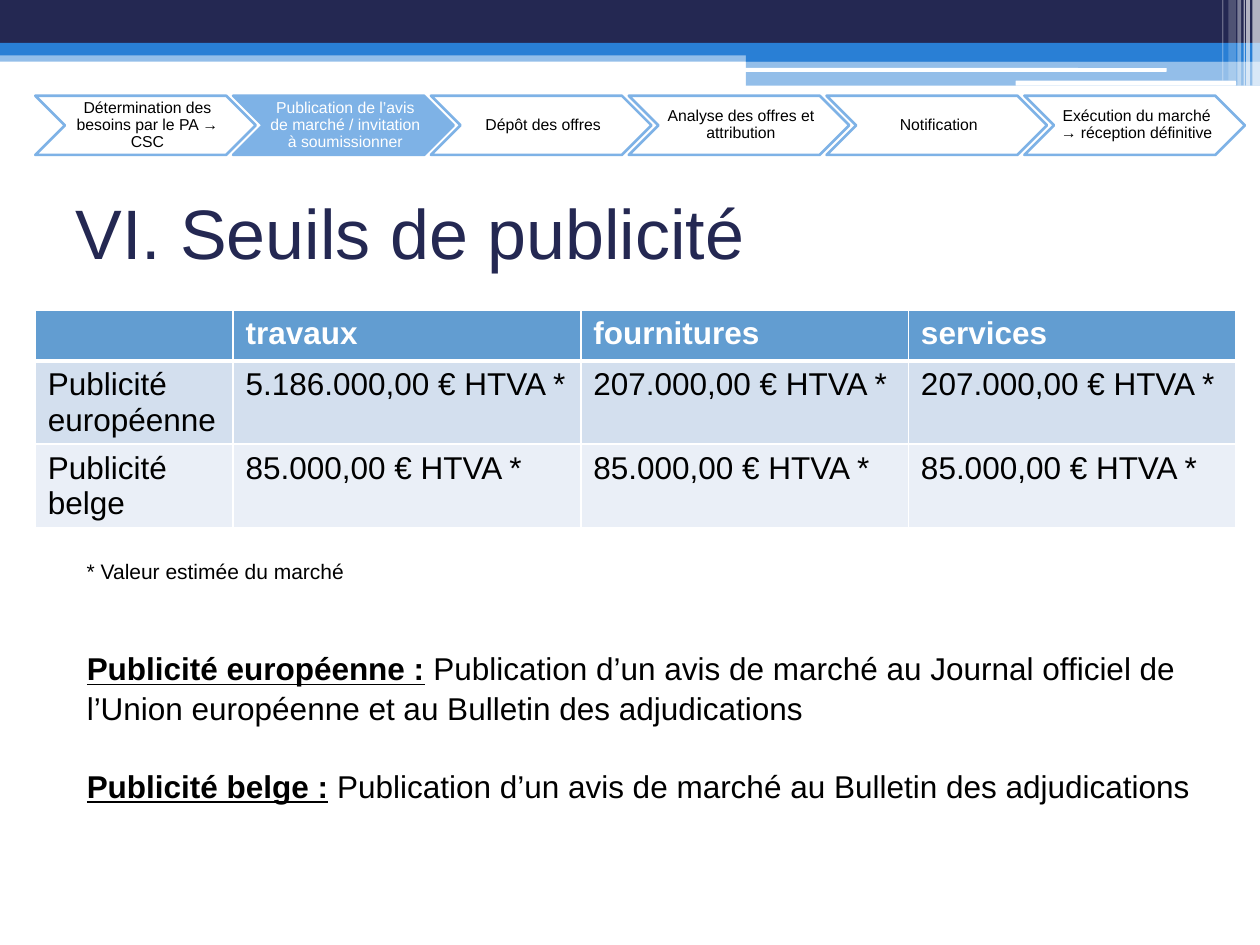
from dataclasses import dataclass
from lxml.etree import SubElement
from pptx import Presentation
from pptx.dml.color import RGBColor
from pptx.enum.shapes import MSO_SHAPE
from pptx.enum.text import MSO_ANCHOR, PP_ALIGN
from pptx.oxml import parse_xml
from pptx.oxml.ns import nsdecls, qn
from pptx.util import Inches, Pt


@dataclass(frozen=True)
class Theme:
    font: str = "Arial"
    navy: str = "242852"
    blue: str = "297FD5"
    sky: str = "7EB2E6"
    white: str = "FFFFFF"
    black: str = "000000"
    header: str = "629DD1"
    bands: tuple = ("D3DFEE", "EAEFF7")
    title_size: int = 40
    body_size: int = 18
    note_size: int = 12
    step_size: int = 9


THEME = Theme()
WIDTH, HEIGHT = 10, 7.5

STEPS = [
    "Détermination des besoins par le PA → CSC",
    "Publication de l’avis de marché / invitation à soumissionner",
    "Dépôt des offres",
    "Analyse des offres et attribution",
    "Notification",
    "Exécution du marché → réception définitive",
]
ACTIVE_STEP = 1
TITLE = "VI. Seuils de publicité"
THRESHOLDS = [
    ["", "travaux", "fournitures", "services"],
    ["Publicité européenne", "5.186.000,00 € HTVA *", "207.000,00 € HTVA *", "207.000,00 € HTVA *"],
    ["Publicité belge"] + ["85.000,00 € HTVA *"] * 3,
]
COLUMN_WIDTHS = [1.57, 2.76, 2.6, 2.6]
ROW_HEIGHTS = [0.38, 0.66, 0.66]
NOTE = "* Valeur estimée du marché"
DEFINITIONS = [
    ("Publicité européenne :",
     "Publication d’un avis de marché au Journal officiel de l’Union européenne et au Bulletin des adjudications"),
    ("Publicité belge :", "Publication d’un avis de marché au Bulletin des adjudications"),
]

BANNER_EDGE = 0.68
BANNER_SPLIT = 5.92
BANDS = [
    (0, 0.4, WIDTH, 0.09, THEME.blue, 50),
    (0, 0, WIDTH, 0.34, THEME.navy, 100),
    (0, 0.34, WIDTH, 0.1, THEME.blue, 100),
    (BANNER_SPLIT, 0.39, WIDTH - BANNER_SPLIT, 0.1, THEME.blue, 100),
    (BANNER_SPLIT, 0.48, WIDTH - BANNER_SPLIT, 0.2, THEME.blue, 50),
]
RULES = [(5.91, 0.54, 3.35, 0.03), (8.06, 0.64, 1.75, 0.04)]
STRIPES = [
    (9.94, 0.06, BANNER_EDGE, 65),
    (9.89, 0.03, BANNER_EDGE, 65),
    (9.87, 0.01, BANNER_EDGE, 60),
    (9.82, 0.03, BANNER_EDGE, 40),
    (9.75, 0.06, 0.64, 20),
    (9.7, 0.01, 0.64, 30),
]


def place(left, top, width, height):
    return [Inches(value) for value in (left, top, width, height)]


def write(para, text, size=THEME.body_size, color=THEME.black, bold=False, underline=False):
    span = para.add_run()
    span.text = text
    span.font.name = THEME.font
    span.font.size = Pt(size)
    span.font.bold = bold
    span.font.underline = underline
    span.font.color.rgb = RGBColor.from_string(color)


def add_block(page, kind, area, fill=None, opacity=100, line=None):
    block = page.shapes.add_shape(kind, *place(*area))
    block.shadow.inherit = False
    if fill:
        block.fill.solid()
        block.fill.fore_color.rgb = RGBColor.from_string(fill)
    else:
        block.fill.background()
    if opacity < 100:
        color = block.fill._xPr.find(".//" + qn("a:srgbClr"))
        SubElement(color, qn("a:alpha"), val=str(opacity * 1000))
    if line:
        block.line.color.rgb = RGBColor.from_string(line)
        block.line.width = Pt(1.5)
    else:
        block.line.fill.background()
    return block


def add_box(page, area):
    frame = page.shapes.add_textbox(*place(*area)).text_frame
    frame.word_wrap = True
    return frame


def add_banner(page):
    for *area, color, opacity in BANDS:
        add_block(page, MSO_SHAPE.RECTANGLE, area, color, opacity)
    for area in RULES:
        add_block(page, MSO_SHAPE.ROUNDED_RECTANGLE, area, THEME.white)
    for left, width, height, opacity in STRIPES:
        add_block(page, MSO_SHAPE.RECTANGLE, (left, 0, width, height), THEME.white, opacity)


def add_steps(page, left=0.28, top=0.76, pitch=1.57, width=1.75, height=0.47):
    for index, text in enumerate(STEPS):
        active = index == ACTIVE_STEP
        area = (left + index * pitch, top, width, height)
        step = add_block(page, MSO_SHAPE.CHEVRON, area, THEME.sky if active else None, line=THEME.sky)
        frame = step.text_frame
        frame.word_wrap = True
        frame.vertical_anchor = MSO_ANCHOR.MIDDLE
        frame.margin_left = Inches(0.04)
        frame.margin_top = frame.margin_right = frame.margin_bottom = Inches(0.01)
        para = frame.paragraphs[0]
        para.alignment = PP_ALIGN.CENTER
        para.line_spacing = 0.9
        write(para, text, size=THEME.step_size, color=THEME.white if active else THEME.black)


def set_borders(cell, bottom):
    properties = cell._tc.get_or_add_tcPr()
    for position, (side, points) in enumerate((("L", 1), ("R", 1), ("T", 1), ("B", bottom))):
        properties.insert(position, parse_xml(
            f'<a:ln{side} {nsdecls("a")} w="{Pt(points)}"><a:solidFill>'
            f'<a:srgbClr val="{THEME.white}"/></a:solidFill></a:ln{side}>'))


def add_thresholds(page):
    area = place(0.28, 2.46, sum(COLUMN_WIDTHS), sum(ROW_HEIGHTS))
    table = page.shapes.add_table(len(ROW_HEIGHTS), len(COLUMN_WIDTHS), *area).table
    for column, width in zip(table.columns, COLUMN_WIDTHS):
        column.width = Inches(width)
    fills = (THEME.header, *THEME.bands)
    for index, (row, height, texts, fill) in enumerate(zip(table.rows, ROW_HEIGHTS, THRESHOLDS, fills)):
        row.height = Inches(height)
        heading = index == 0
        for cell, text in zip(row.cells, texts):
            cell.fill.solid()
            cell.fill.fore_color.rgb = RGBColor.from_string(fill)
            set_borders(cell, bottom=3 if heading else 1)
            if text:
                write(cell.text_frame.paragraphs[0], text, bold=heading,
                      color=THEME.white if heading else THEME.black)


def add_title(page):
    title = page.shapes.title
    title.left, title.top, title.width, title.height = place(0.5, 1.25, 0.9 * WIDTH, 1.17)
    title.text_frame.vertical_anchor = MSO_ANCHOR.MIDDLE
    para = title.text_frame.paragraphs[0]
    para.alignment = PP_ALIGN.LEFT
    write(para, TITLE, size=THEME.title_size, color=THEME.navy)


def add_definitions(page):
    frame = add_box(page, (0.59, 5.09, 8.98, 1.92))
    for index, (term, meaning) in enumerate(DEFINITIONS):
        para = frame.add_paragraph() if index else frame.paragraphs[0]
        para.line_spacing = 1.05
        para.space_before = Pt(22 if index else 0)
        write(para, term, bold=True, underline=True)
        write(para, " ", bold=True)
        write(para, meaning)


def main():
    deck = Presentation()
    deck.slide_width, deck.slide_height = Inches(WIDTH), Inches(HEIGHT)
    page = deck.slides.add_slide(deck.slide_layouts[5])
    add_banner(page)
    add_title(page)
    add_thresholds(page)
    add_steps(page)
    add_definitions(page)
    write(add_box(page, (0.59, 4.38, 8.27, 0.3)).paragraphs[0], NOTE, size=THEME.note_size)
    deck.save("out.pptx")


if __name__ == "__main__":
    main()
